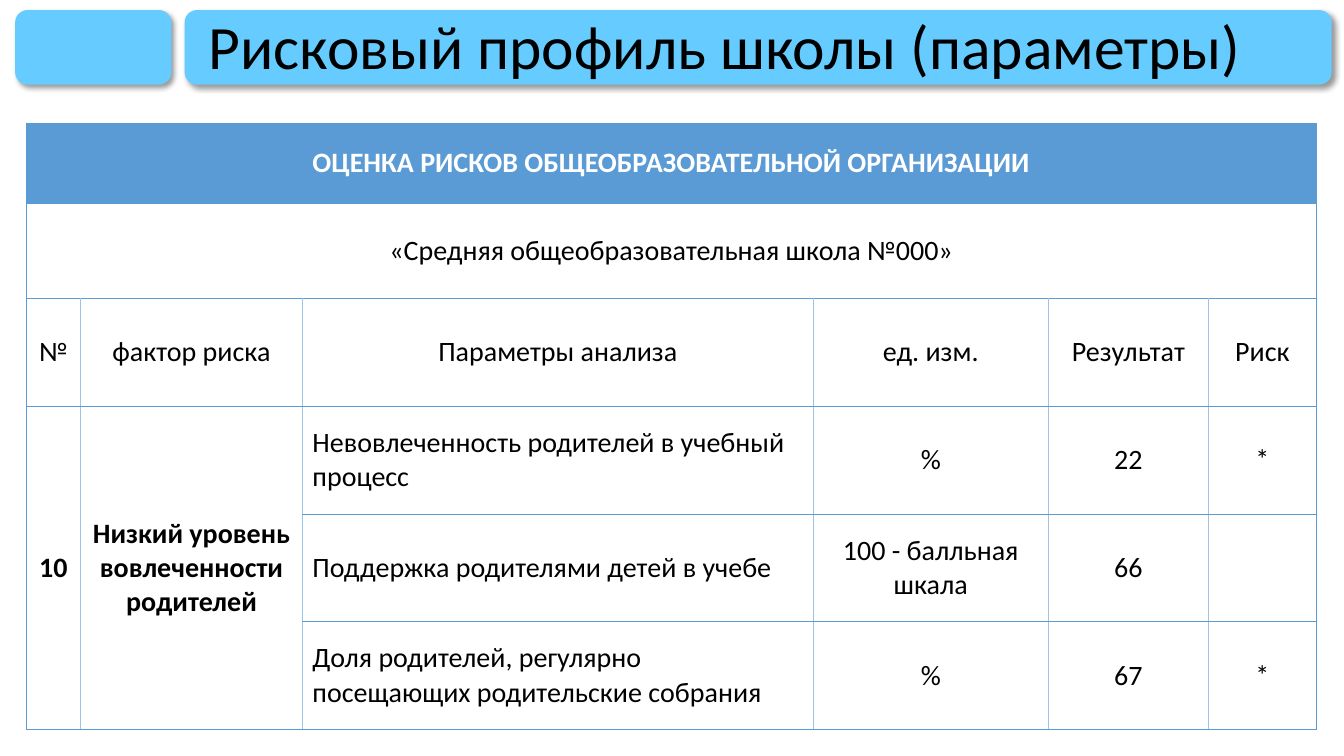
from lxml import etree
from pptx import Presentation
from pptx.dml.color import RGBColor
from pptx.enum.shapes import MSO_SHAPE
from pptx.enum.text import MSO_ANCHOR, MSO_AUTO_SIZE, PP_ALIGN
from pptx.oxml import parse_xml
from pptx.oxml.ns import qn
from pptx.util import Pt

ROUNDED = MSO_SHAPE.ROUNDED_RECTANGLE
MIDDLE = MSO_ANCHOR.MIDDLE
LEFT, CENTER = PP_ALIGN.LEFT, PP_ALIGN.CENTER
NO_FIT = MSO_AUTO_SIZE.NONE
NAMESPACE = "http://schemas.openxmlformats.org/drawingml/2006/main"
SKY, BLUE, PALE_BLUE = "66CCFF", "5B9BD5", "9DC3E6"
BLACK, WHITE = "000000", "FFFFFF"
OUTER, INNER = (BLUE, 0.5), (PALE_BLUE, 1)


def color(value):
    return RGBColor.from_string(value)


def format_text(para, text, align, text_color, **formats):
    para.alignment = align
    span = para.add_run()
    span.text = text
    span.font.color.rgb = color(text_color)
    for name, value in formats.items():
        setattr(span.font, name, value)


deck = Presentation()
deck.slide_width, deck.slide_height = Pt(960), Pt(540)
page = deck.slides.add_slide(deck.slide_layouts[5])
title = page.shapes.title

# Header bars, placed behind the title
for left, width in ((131.8, 819.4), (10.8, 111.6)):
    bar = page.shapes.add_shape(ROUNDED, Pt(left), Pt(7.2), Pt(width), Pt(53.3))
    bar.fill.solid()
    bar.fill.fore_color.rgb = color(SKY)
    bar.line.fill.background()
    bar.shadow.inherit = False
    bar._element.spPr.find(qn("a:effectLst")).append(parse_xml(
        f'<a:outerShdw xmlns:a="{NAMESPACE}" blurRad="{Pt(4)}" dist="{Pt(3)}" '
        f'dir="2700000" algn="tl" rotWithShape="0"><a:srgbClr val="{BLACK}">'
        '<a:alpha val="40000"/></a:srgbClr></a:outerShdw>'))
    title._element.addprevious(bar._element)

# Title
title.left, title.top = Pt(141.8), Pt(11.5)
title.width, title.height = Pt(799.2), Pt(47.5)
frame = title.text_frame
frame.auto_size = NO_FIT
frame.word_wrap = True
frame.vertical_anchor = MIDDLE
frame.paragraphs[0].line_spacing = 0.9
format_text(frame.paragraphs[0], "Рисковый профиль школы (параметры)", LEFT, BLACK,
            name="Calibri", size=Pt(44))

# Risk table: an empty string is a blank or merged cell
rows = [
    ["ОЦЕНКА РИСКОВ ОБЩЕОБРАЗОВАТЕЛЬНОЙ ОРГАНИЗАЦИИ", "", "", "", "", ""],
    ["«Средняя общеобразовательная школа №000»", "", "", "", "", ""],
    ["№", "фактор риска", "Параметры анализа", "ед. изм.", "Результат", "Риск"],
    ["10", "Низкий уровень вовлеченности родителей",
     "Невовлеченность родителей в учебный процесс", "%", "22", "*"],
    ["", "", "Поддержка родителями детей в учебе", "100 - балльная шкала", "66", ""],
    ["", "", "Доля родителей, регулярно посещающих родительские собрания",
     "%", "67", "*"],
]
widths = [38.9, 158.4, 365, 167.8, 114.5, 77]
heights = [57.6, 67.7] + [77] * 4
table = page.shapes.add_table(len(rows), len(widths), Pt(18.7), Pt(87.8),
                              Pt(sum(widths)), Pt(sum(heights))).table
table.first_row = table.horz_banding = False
for column, width in zip(table.columns, widths):
    column.width = Pt(width)
for row, height in zip(table.rows, heights):
    row.height = Pt(height)

# Cell borders, fills and text
last = len(widths) - 1
for r, texts in enumerate(rows):
    for c, text in enumerate(texts):
        cell = table.cell(r, c)
        cell.vertical_anchor = MIDDLE
        borders = {
            "lnL": OUTER if r < 2 or c == 0 else INNER,
            "lnR": OUTER if r < 2 or c == last else INNER,
            "lnT": OUTER,
            "lnB": OUTER,
        }
        for tag, (line_color, weight) in borders.items():
            line = etree.SubElement(cell._tc.get_or_add_tcPr(), qn(f"a:{tag}"),
                                    w=str(Pt(weight)))
            fill = etree.SubElement(line, qn("a:solidFill"))
            etree.SubElement(fill, qn("a:srgbClr"), val=line_color)
        if r == 0:
            cell.fill.solid()
            cell.fill.fore_color.rgb = color(BLUE)
        else:
            cell.fill.background()
        if text:
            format_text(cell.text_frame.paragraphs[0], text,
                        LEFT if r > 2 and c == 2 else CENTER,
                        WHITE if r == 0 else BLACK,
                        name="Calibri", size=Pt(20),
                        bold=r == 0 or (r > 2 and c < 2))

# Merged cells
for r in (0, 1):
    table.cell(r, 0).merge(table.cell(r, last))
for c in (0, 1):
    table.cell(3, c).merge(table.cell(5, c))

deck.save("out.pptx")
